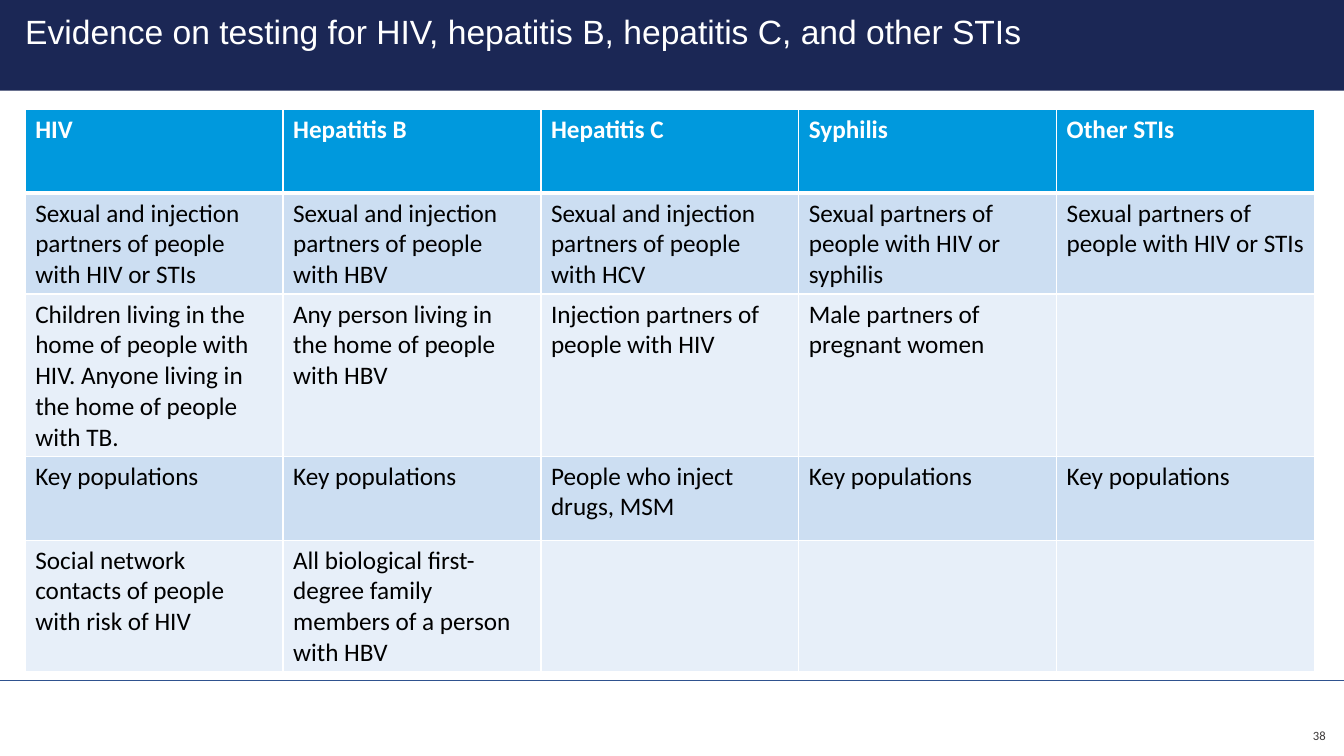
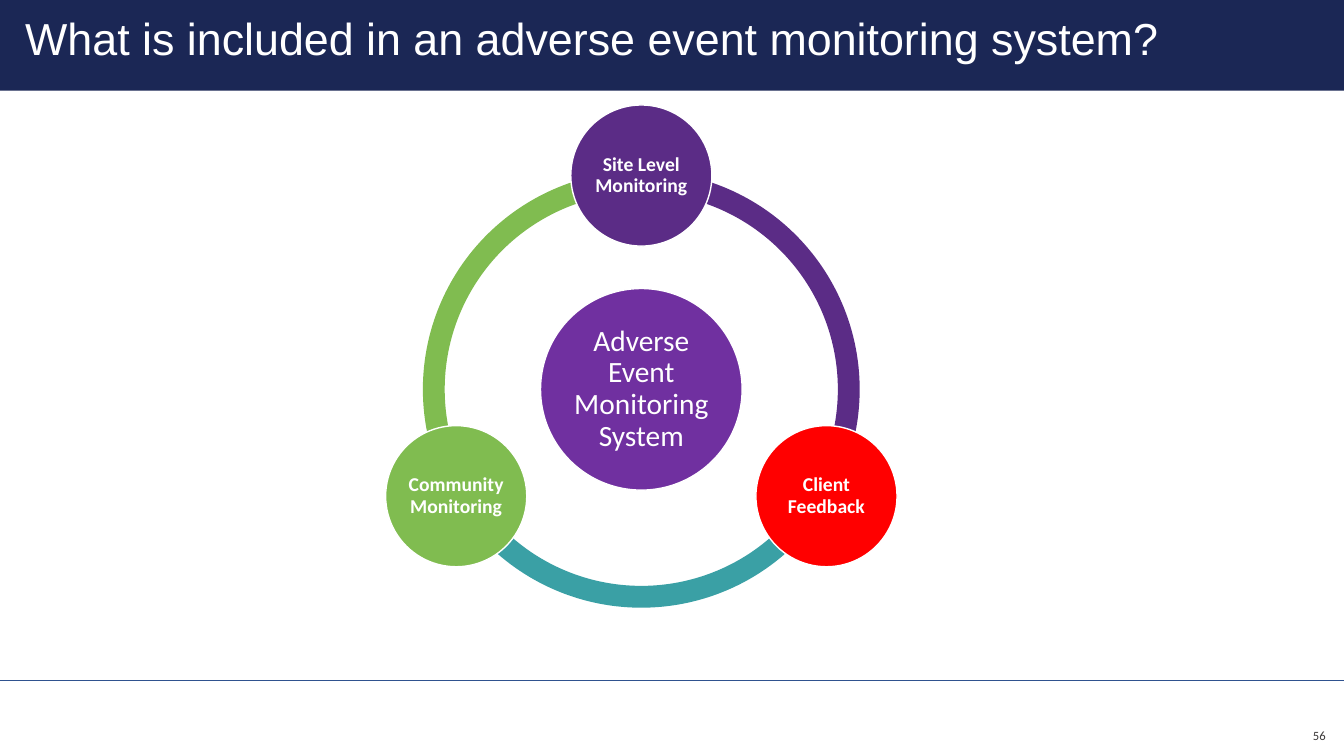
from dataclasses import dataclass
from math import cos, radians, sin

from lxml.etree import SubElement
from pptx import Presentation
from pptx.dml.color import RGBColor
from pptx.enum.shapes import MSO_AUTO_SHAPE_TYPE as Shape, MSO_CONNECTOR as Connector
from pptx.enum.text import MSO_ANCHOR as Anchor, MSO_AUTO_SIZE as AutoSize, PP_ALIGN as Align
from pptx.oxml.ns import qn
from pptx.util import Inches, Pt


@dataclass(frozen=True)
class Theme:
    heading_font: str = "Arial"
    body_font: str = "Calibri"
    white: str = "FFFFFF"
    black: str = "000000"
    navy: str = "1B2755"
    rule: str = "2F528F"
    number: str = "3B3838"
    header: str = "0099DD"
    bands: tuple = ("CCDEF2", "E7EFF9")
    indigo: str = "5B2C86"
    violet: str = "7030A0"
    red: str = "FF0000"
    green: str = "80BC50"
    teal: str = "3AA0A5"
    title_size: int = 32
    long_title_size: int = 24
    hub_size: int = 21
    table_size: int = 18
    node_size: int = 14
    number_size: int = 9
    thin: float = 0.5
    border: float = 1
    thick: float = 3


class Slides:
    COLUMNS, ROWS = 160, 90
    MARGIN, CONTENT_WIDTH = 3, 153.5

    def __init__(self, theme):
        self.theme = theme
        self.deck = Presentation()
        self.deck.slide_width = Inches(13.33)
        self.deck.slide_height = Inches(7.5)
        self.page = None

    def x(self, columns):
        return round(self.deck.slide_width * columns / self.COLUMNS)

    def y(self, rows):
        return round(self.deck.slide_height * rows / self.ROWS)

    def place(self, left, top, width, height):
        return self.x(left), self.y(top), self.x(width), self.y(height)

    def color(self, value):
        return RGBColor.from_string(value)

    def set_text(self, frame, text, size, color, font=None, bold=False, align=Align.LEFT):
        frame.text = text
        frame.word_wrap = True
        para = frame.paragraphs[0]
        para.alignment = align
        for span in para.runs:
            span.font.name = font or self.theme.body_font
            span.font.size = Pt(size)
            span.font.bold = bold
            span.font.color.rgb = self.color(color)
        return para

    def inset(self, frame, inches):
        frame.margin_left = frame.margin_right = Inches(inches)
        frame.margin_top = frame.margin_bottom = Inches(inches)

    def shape(self, kind, fill, *area, outline=None):
        shape = self.page.shapes.add_shape(kind, *self.place(*area))
        shape.shadow.inherit = False
        shape.fill.solid()
        shape.fill.fore_color.rgb = self.color(fill)
        if outline:
            shape.line.color.rgb = self.color(outline)
            shape.line.width = Pt(self.theme.border)
        else:
            shape.line.fill.background()
        return shape

    def add_page(self, title, number, title_size):
        theme = self.theme
        self.page = self.deck.slides.add_slide(self.deck.slide_layouts[6])
        self.shape(Shape.RECTANGLE, theme.navy, 0, 0, self.COLUMNS, 10.8)
        self.rule(81)
        box = self.page.shapes.add_textbox(*self.place(151.3, 85.2, 7.7, 4.8))
        box.text_frame.vertical_anchor = Anchor.MIDDLE
        self.set_text(box.text_frame, str(number), theme.number_size, theme.number,
                      align=Align.RIGHT)
        box = self.page.shapes.add_textbox(
            *self.place(self.MARGIN, 1.3, self.CONTENT_WIDTH, title_size / 5))
        self.inset(box.text_frame, 0)
        self.set_text(box.text_frame, title, title_size, theme.white, theme.heading_font)
        box.text_frame.auto_size = AutoSize.SHAPE_TO_FIT_TEXT

    def rule(self, row):
        line = self.page.shapes.add_connector(
            Connector.STRAIGHT, 0, self.y(row), self.deck.slide_width, self.y(row))
        line.line.color.rgb = self.color(self.theme.rule)
        line.line.width = Pt(self.theme.thin)
        SubElement(line._element.spPr, qn("a:effectLst"))

    def borders(self, cell, top, bottom):
        properties = cell._tc.get_or_add_tcPr()
        side_width = self.theme.border
        for side, width in (("L", side_width), ("R", side_width), ("T", top), ("B", bottom)):
            line = SubElement(properties, qn(f"a:ln{side}"), w=str(int(Pt(width))))
            fill = SubElement(line, qn("a:solidFill"))
            SubElement(fill, qn("a:srgbClr"), val=self.theme.white)

    def table(self, top, heights, rows):
        theme = self.theme
        columns = len(rows[0])
        area = self.place(self.MARGIN, top, self.CONTENT_WIDTH, sum(heights))
        table = self.page.shapes.add_table(len(rows), columns, *area).table
        table.horz_banding = False
        for column in table.columns:
            column.width = self.x(self.CONTENT_WIDTH / columns)
        for index, (height, texts) in enumerate(zip(heights, rows)):
            table.rows[index].height = self.y(height)
            heading = index == 0
            for column, text in enumerate(texts):
                cell = table.cell(index, column)
                self.borders(cell, theme.thick if index == 1 else theme.border,
                             theme.thick if heading else theme.border)
                cell.fill.solid()
                cell.fill.fore_color.rgb = self.color(
                    theme.header if heading else theme.bands[(index - 1) % 2])
                self.set_text(cell.text_frame, text, theme.table_size,
                              theme.white if heading else theme.black, bold=heading)

    def circle(self, center, radius, fill, text, size, bold=False):
        left, top = (middle - radius for middle in center)
        circle = self.shape(Shape.OVAL, fill, left, top, 2 * radius, 2 * radius,
                            outline=self.theme.white)
        frame = circle.text_frame
        self.inset(frame, 0.02)
        frame.vertical_anchor = Anchor.MIDDLE
        para = self.set_text(frame, text, size, self.theme.white, bold=bold, align=Align.CENTER)
        para.line_spacing = 0.9

    def arc(self, center, radius, start, end, fill):
        left, top = (middle - radius for middle in center)
        arc = self.shape(Shape.BLOCK_ARC, fill, left, top, 2 * radius, 2 * radius)
        for index, value in enumerate((start * 0.6, end * 0.6, 0.05)):
            arc.adjustments[index] = value

    def cycle(self, center, hub, nodes):
        theme = self.theme
        step = 360 / len(nodes)
        angles = [(270 + step * index) % 360 for index in range(len(nodes))]
        for angle, (_, _, arc_fill) in zip(angles, nodes):
            self.arc(center, 26, angle, (angle + step) % 360, arc_fill)
        self.circle(center, 12, theme.violet, hub, theme.hub_size)
        for angle, (text, fill, _) in zip(angles, nodes):
            spot = (center[0] + 25.45 * cos(radians(angle)),
                    center[1] + 25.45 * sin(radians(angle)))
            self.circle(spot, 8.4, fill, text, theme.node_size, bold=True)


def main():
    theme = Theme()
    slides = Slides(theme)

    slides.add_page("Evidence on testing for HIV, hepatitis B, hepatitis C, and other STIs",
                    38, theme.long_title_size)
    slides.table(13, (10, 12, 19.3, 10, 15.5), [
        ("HIV", "Hepatitis B", "Hepatitis C", "Syphilis", "Other STIs"),
        ("Sexual and injection partners of people with HIV or STIs",
         "Sexual and injection partners of people with HBV",
         "Sexual and injection partners of people with HCV",
         "Sexual partners of people with HIV or syphilis",
         "Sexual partners of people with HIV or STIs"),
        ("Children living in the home of people with HIV. "
         "Anyone living in the home of people with TB.",
         "Any person living in the home of people with HBV",
         "Injection partners of people with HIV",
         "Male partners of pregnant women", ""),
        ("Key populations", "Key populations", "People who inject drugs, MSM",
         "Key populations", "Key populations"),
        ("Social network contacts of people with risk of HIV",
         "All biological first-degree family members of a person with HBV", "", "", ""),
    ])

    slides.add_page("What is included in an adverse event monitoring system?",
                    56, theme.title_size)
    slides.cycle((76.35, 46.35), "Adverse Event Monitoring System", [
        ("Site Level Monitoring", theme.indigo, theme.indigo),
        ("Client Feedback", theme.red, theme.teal),
        ("Community Monitoring", theme.green, theme.green),
    ])

    slides.deck.save("out.pptx")


if __name__ == "__main__":
    main()
